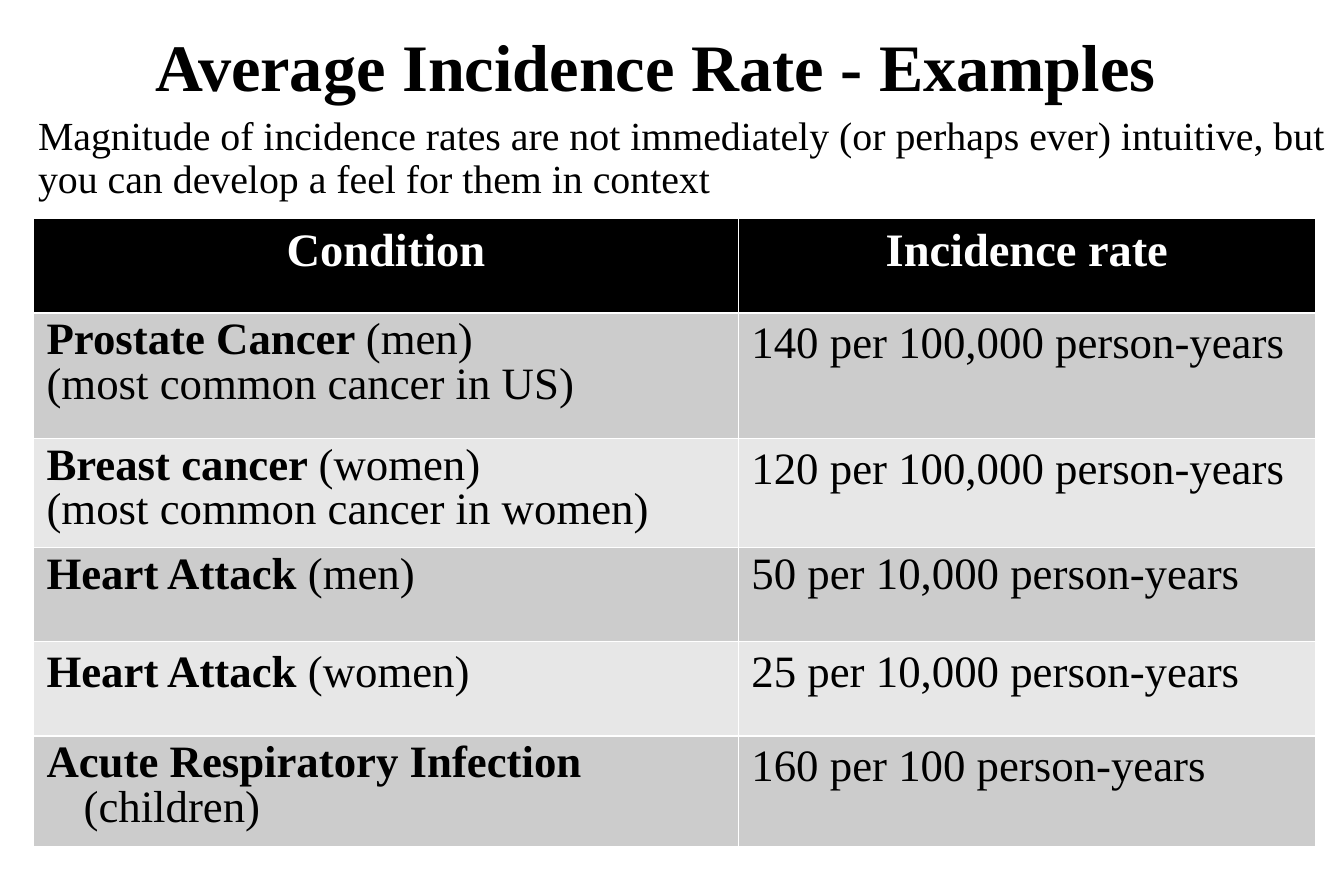
from dataclasses import dataclass

from pptx import Presentation
from pptx import util as u
from pptx.dml.color import RGBColor
from pptx.enum import text

PX = u.Inches(1) // 100


@dataclass(frozen=True)
class Theme:
    font: str = "Times New Roman"
    black: str = "000000"
    white: str = "FFFFFF"
    bands: tuple = ("CCCCCC", "E7E7E7")
    title: int = 40
    intro: int = 24
    header: int = 28
    body: int = 27


theme = Theme()


def add_span(para, words, size, bold=False, color=theme.black):
    span = para.add_run()
    span.text = words
    span.font.name = theme.font
    span.font.size = u.Pt(size)
    span.font.bold = bold
    span.font.color.rgb = RGBColor.from_string(color)


def indent(para, left, first=0):
    """Set the left margin and first-line offset in px, with tight lines."""
    para.line_spacing = 0.9
    properties = para._p.get_or_add_pPr()
    properties.set("marL", str(left * PX))
    properties.set("indent", str(first * PX))


deck = Presentation()
deck.slide_width, deck.slide_height = 1125 * PX, 750 * PX
page = deck.slides.add_slide(deck.slide_layouts[6])

# Title and introduction
title = page.shapes.add_textbox(19 * PX, -8 * PX, 1059 * PX, 125 * PX).text_frame
title.word_wrap = True
title.vertical_anchor = text.MSO_ANCHOR.MIDDLE
title.paragraphs[0].alignment = text.PP_ALIGN.CENTER
add_span(title.paragraphs[0], "Average Incidence Rate - Examples", theme.title, bold=True)

intro = page.shapes.add_textbox(-28 * PX, 92 * PX, 1153 * PX, 92 * PX).text_frame
intro.word_wrap = True
indent(intro.paragraphs[0], 50)
intro.paragraphs[0].space_before = u.Pt(5)
add_span(
    intro.paragraphs[0],
    "Magnitude of incidence rates are not immediately (or perhaps ever) intuitive, "
    "but you can develop a feel for them in context",
    theme.intro,
)

# Table of rates: condition, group, remark, rate
headings = ["Condition", "Incidence rate"]
conditions = [
    ("Prostate Cancer ", "(men)", "(most common cancer in US)", "140 per 100,000 person-years"),
    ("Breast cancer ", "(women)", "(most common cancer in women)", "120 per 100,000 person-years"),
    ("Heart Attack ", "(men)", "", "50 per 10,000 person-years"),
    ("Heart Attack ", "(women)", "", "25 per 10,000 person-years"),
    ("Acute Respiratory Infection ", "(children)", "", "160 per 100 person-years"),
]
column_widths = [590, 483]
row_heights = [79, 105, 86, 79, 79, 93]

table = page.shapes.add_table(
    len(row_heights), len(column_widths),
    28 * PX, 183 * PX, sum(column_widths) * PX, sum(row_heights) * PX,
).table
for column, width in zip(table.columns, column_widths):
    column.width = width * PX
for row, height in zip(table.rows, row_heights):
    row.height = height * PX

for index, row in enumerate(table.rows):
    fill = theme.bands[(index - 1) % 2] if index else theme.black
    for cell in row.cells:
        cell.margin_left = cell.margin_right = 11 * PX
        cell.margin_top = cell.margin_bottom = 5 * PX
        cell.fill.solid()
        cell.fill.fore_color.rgb = RGBColor.from_string(fill)

for cell, heading in zip(table.rows[0].cells, headings):
    para = cell.text_frame.paragraphs[0]
    para.alignment = text.PP_ALIGN.CENTER
    add_span(para, heading, theme.header, bold=True, color=theme.white)

for index, (condition, group, remark, rate) in enumerate(conditions, start=1):
    condition_frame = table.cell(index, 0).text_frame
    para = condition_frame.paragraphs[0]
    add_span(para, condition, theme.body, bold=True)
    add_span(para, group, theme.body)
    if remark:
        add_span(condition_frame.add_paragraph(), remark, theme.body)
    rate_para = table.cell(index, 1).text_frame.paragraphs[0]
    add_span(rate_para, rate, theme.body)

    if (condition, group) != ("Heart Attack ", "(women)"):
        for para in condition_frame.paragraphs:
            indent(para, 31, -31)
    if (condition, group) == ("Heart Attack ", "(men)"):
        indent(rate_para, 31, -31)

deck.save("out.pptx")
